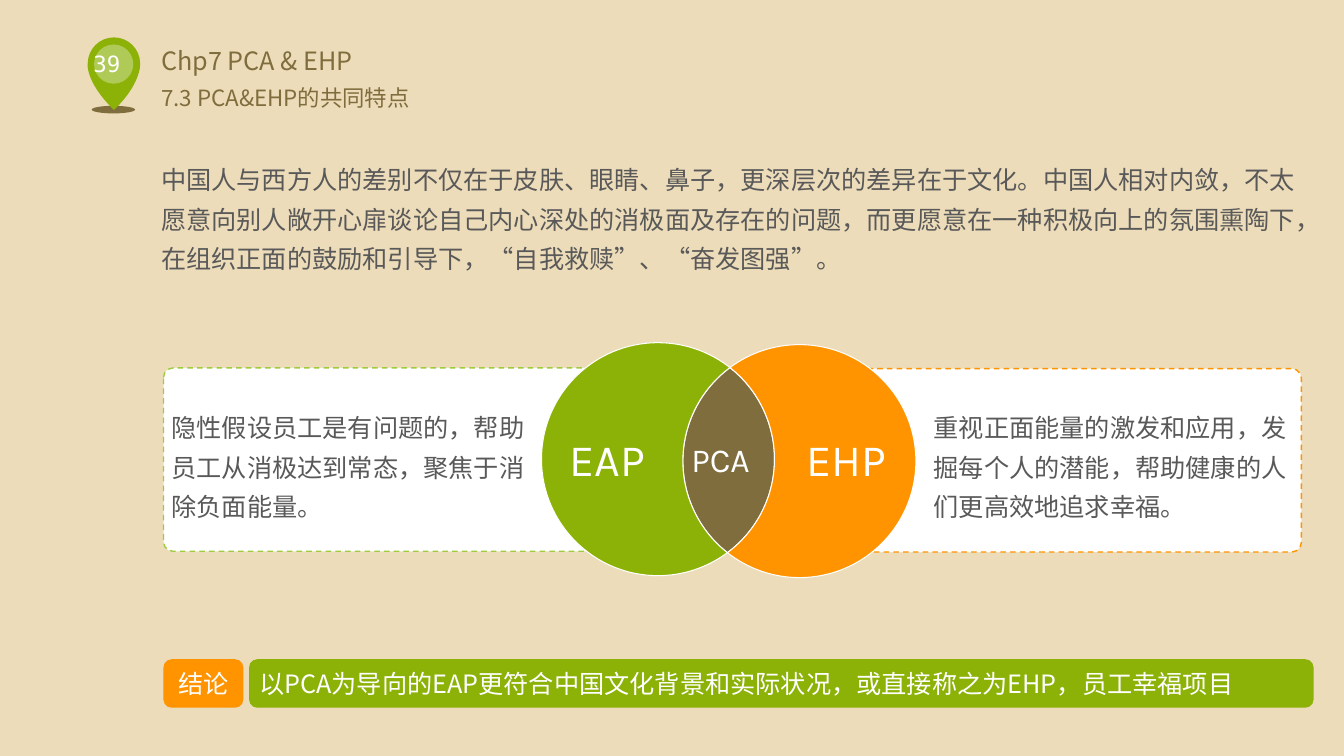
from math import acos, atan2, cos, hypot, pi, sin, tan

from lxml.etree import SubElement
from pptx import Presentation
from pptx.dml.color import RGBColor
from pptx.enum.dml import MSO_LINE
from pptx.enum.shapes import MSO_SHAPE
from pptx.enum.text import MSO_ANCHOR, PP_ALIGN
from pptx.oxml.ns import qn
from pptx.util import Pt

COLORS = {
    "background": "EDDCB9", "brown": "806D3E", "green": "8CB208", "light green": "9FCC3E",
    "orange": "FF9400", "label orange": "FF9300", "white": "FFFFFF", "gray": "595959",
}
COLORS = {name: RGBColor.from_string(value) for name, value in COLORS.items()}
CJK_FONT = "Noto Sans CJK SC"

presentation = Presentation()
presentation.slide_width, presentation.slide_height = Pt(960), Pt(540)
slide = presentation.slides.add_slide(presentation.slide_layouts[6])
slide.background.fill.solid()
slide.background.fill.fore_color.rgb = COLORS["background"]


def paint(shape, fill, line=None):
    """Give a shape a flat fill and an optional outline, without shadow."""
    shape.shadow.inherit = False
    shape.fill.solid()
    shape.fill.fore_color.rgb = COLORS[fill]
    if line:
        shape.line.color.rgb = COLORS[line]
    else:
        shape.line.fill.background()


def write(shape, text, size, color, font=CJK_FONT, wrap=True, spacing=None, align=PP_ALIGN.LEFT):
    """Put one styled paragraph into a shape or text box."""
    shape.text_frame.word_wrap = wrap
    paragraph = shape.text_frame.paragraphs[0]
    paragraph.text = text
    paragraph.alignment = align
    if spacing:
        paragraph.line_spacing = spacing
    paragraph.font.size = Pt(size)
    paragraph.font.color.rgb = COLORS[color]
    paragraph.font.name = font
    SubElement(paragraph.font._element, qn("a:ea"), typeface=font)


pin_shadow = slide.shapes.add_shape(MSO_SHAPE.OVAL, Pt(65.5), Pt(75.6), Pt(31), Pt(5.4))
paint(pin_shadow, "brown")

# Dashed cards behind the circles
cards = [
    (602.6, 263.3, 327, "orange"),
    (116.8, 262.8, 322, "light green"),
]
for left, top, width, line in cards:
    card = slide.shapes.add_shape(MSO_SHAPE.ROUNDED_RECTANGLE, Pt(left), Pt(top), Pt(width), Pt(131))
    card.adjustments[0] = 0.052
    paint(card, "white", line)
    card.line.width = Pt(1)
    card.line.dash_style = MSO_LINE.DASH

# Conclusion bar and its label
bars = [(178, 760.3, "green"), (116.8, 57, "label orange")]
for left, width, fill in bars:
    bar = slide.shapes.add_shape(MSO_SHAPE.ROUNDED_RECTANGLE, Pt(left), Pt(470.9), Pt(width), Pt(34.6))
    paint(bar, fill)
frame = bar.text_frame
frame.margin_left = frame.margin_right = frame.margin_top = frame.margin_bottom = 0
frame.vertical_anchor = MSO_ANCHOR.MIDDLE
write(bar, "结论", 18, "white", align=PP_ALIGN.CENTER)

# Pin and overlapping circles: arcs (centre, start, end), then free curves
pin_curves = [
    ((100, 49), (99.8, 49.5), (99.4, 51.1)),
    ((97.9, 56.9), (93.6, 67), (81.4, 78.5)),
    ((81.4, 78.5), (64, 62.6), (62.6, 47.5)),
]
eap_center, ehp_center = (470, 328), (571, 329.4)
dx, dy = ehp_center[0] - eap_center[0], ehp_center[1] - eap_center[1]
radius = 83.2
tilt = atan2(dy, dx)
half = acos(hypot(dx, dy) / 2 / radius)
eap_top, eap_bottom = tilt - half, tilt + half
ehp_top, ehp_bottom = tilt + pi + half, tilt + pi - half
outlines = [
    ("green", None, 18.7, [((81.4, 45.4), pi, 2 * pi)], pin_curves),
    ("brown", "white", radius,
     [(eap_center, eap_top, eap_bottom), (ehp_center, ehp_bottom, ehp_top)], []),
    ("green", "white", radius,
     [(eap_center, eap_bottom, eap_top + 2 * pi), (ehp_center, ehp_top, ehp_bottom)], []),
    ("orange", "white", radius,
     [(ehp_center, ehp_top, ehp_bottom + 2 * pi), (eap_center, eap_bottom, eap_top)], []),
]
for fill, line, size, arcs, curves in outlines:
    (x, y), first_angle, _ = arcs[0]
    points = [(x + size * cos(first_angle), y + size * sin(first_angle))]
    for (x, y), start, end in arcs:
        quarters = [n * pi / 2 for n in range(-4, 9) if min(start, end) < n * pi / 2 < max(start, end)]
        angles = sorted([start, *quarters, end], reverse=start > end)
        for a, b in zip(angles, angles[1:]):
            handle = 4 / 3 * tan((b - a) / 4)
            points += [
                (x + size * (cos(a) - handle * sin(a)), y + size * (sin(a) + handle * cos(a))),
                (x + size * (cos(b) + handle * sin(b)), y + size * (sin(b) - handle * cos(b))),
                (x + size * cos(b), y + size * sin(b)),
            ]
    for curve in curves:
        points += curve
    points = [(100 * x, 100 * y) for x, y in points]
    builder = slide.shapes.build_freeform(*points[0], scale=Pt(1) / 100)
    builder.add_line_segments(points[1:], close=True)
    outline = builder.convert_to_shape()
    # Every three vertices become one Bézier segment
    segments = list(outline._element.iter(qn("a:lnTo")))
    for first, second, third in zip(segments[::3], segments[1::3], segments[2::3]):
        first.tag = qn("a:cubicBezTo")
        for segment in (second, third):
            first.append(segment[0])
            segment.getparent().remove(segment)
    paint(outline, fill, line)
    if line:
        outline.line.width = Pt(0)

# Page number in the pin
pin_center = slide.shapes.add_shape(MSO_SHAPE.OVAL, Pt(67.2), Pt(31.8), Pt(28), Pt(28))
paint(pin_center, "white")
pin_color = pin_center.fill._xPr.find(qn("a:solidFill"))[0]
SubElement(pin_color, qn("a:alpha"), val="32000")
page_number = slide.shapes.add_textbox(Pt(50.8), Pt(32.4), Pt(51), Pt(26.6))
write(page_number, "39", 16, "white", "DejaVu Sans Mono", align=PP_ALIGN.CENTER)

# Text boxes: left, top, width, height, text, size, colour, font, wrap, line spacing
texts = [
    (108, 28.8, 161, 29, "Chp7 PCA & EHP", 18, "brown", CJK_FONT, False, None),
    (108, 56.6, 195, 26.6, "7.3 PCA&EHP的共同特点", 16, "brown", CJK_FONT, True, None),
    (108, 107.6, 830, 92, "中国人与西方人的差别不仅在于皮肤、眼睛、鼻子，更深层次的差异在于文化。"
     "中国人相对内敛，不太愿意向别人敞开心扉谈论自己内心深处的消极面及存在的问题，"
     "而更愿意在一种积极向上的氛围熏陶下，在组织正面的鼓励和引导下，“自我救赎”、“奋发图强”。",
     18, "gray", CJK_FONT, True, 1.3),
    (178, 473.8, 760.3, 29, "以PCA为导向的EAP更符合中国文化背景和实际状况，或直接称之为EHP，员工幸福项目",
     18, "white", CJK_FONT, True, None),
    (399.6, 304.8, 70, 46, "EAP", 32, "white", "Karla", False, None),
    (568.8, 304.8, 74, 46, "EHP", 32, "white", "Karla", False, None),
    (486.7, 310, 57, 36, "PCA", 24, "white", "Karla", False, None),
    (115.4, 284.7, 268, 92, "隐性假设员工是有问题的，帮助员工从消极达到常态，聚焦于消除负面能量。",
     18, "gray", CJK_FONT, True, 1.3),
    (659.9, 284.7, 270, 92, "重视正面能量的激发和应用，发掘每个人的潜能，帮助健康的人们更高效地追求幸福。",
     18, "gray", CJK_FONT, True, 1.3),
]
for left, top, width, height, *style in texts:
    write(slide.shapes.add_textbox(Pt(left), Pt(top), Pt(width), Pt(height)), *style)

presentation.save("out.pptx")
